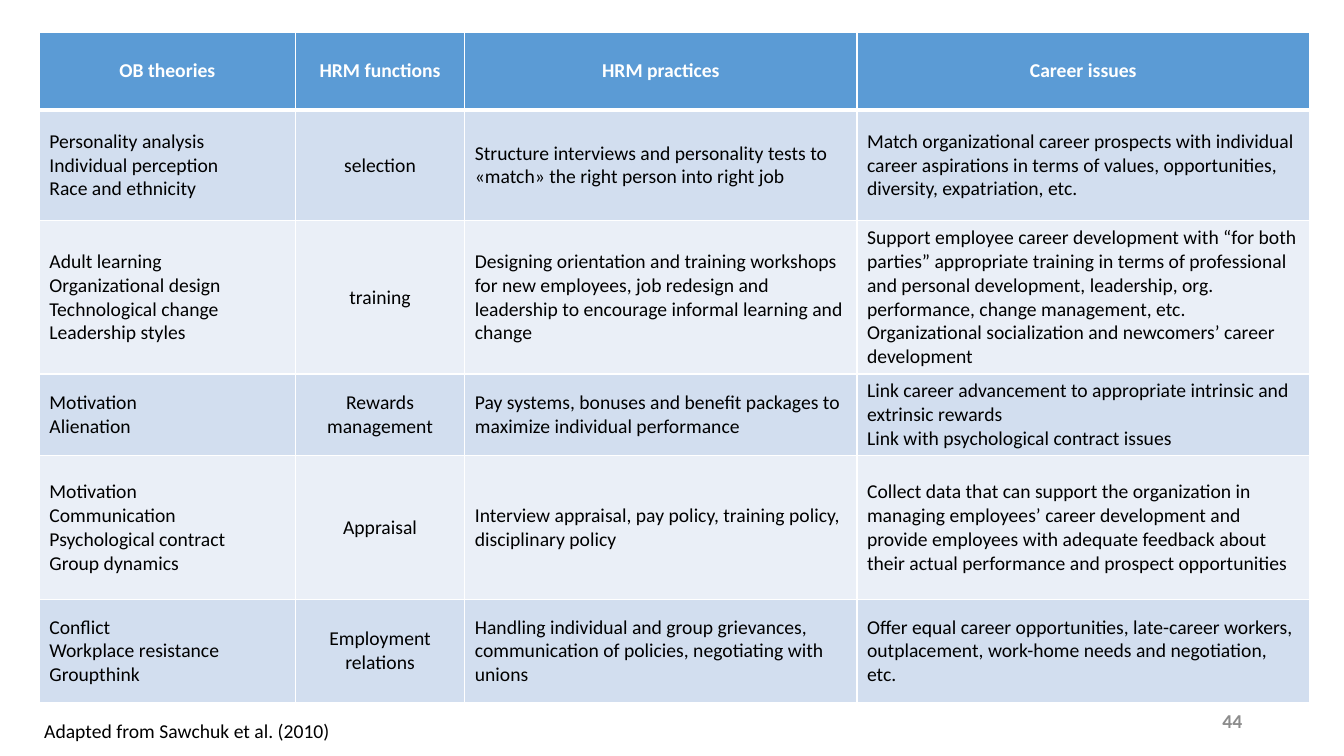
from lxml import etree
from pptx import Presentation
from pptx.dml.color import RGBColor
from pptx.enum.text import MSO_ANCHOR, PP_ALIGN
from pptx.oxml.ns import qn
from pptx.util import Inches, Pt

HEADINGS = ("OB theories", "HRM functions", "HRM practices", "Career issues")
TOPICS = [
    ("Personality analysis\nIndividual perception\nRace and ethnicity",
     "selection",
     "Structure interviews and personality tests to «match» the right person into right job",
     "Match organizational career prospects with individual career aspirations in terms of "
     "values, opportunities, diversity, expatriation, etc."),
    ("Adult learning\nOrganizational design\nTechnological change\nLeadership styles",
     "training",
     "Designing orientation and training workshops for new employees, job redesign and "
     "leadership to encourage informal learning and change",
     "Support employee career development with “for both parties” appropriate training in "
     "terms of professional and personal development, leadership, org. performance, change "
     "management, etc.\nOrganizational socialization and newcomers’ career development"),
    ("Motivation\nAlienation",
     "Rewards management",
     "Pay systems, bonuses and benefit packages to maximize individual performance",
     "Link career advancement to appropriate intrinsic and extrinsic rewards\n"
     "Link with psychological contract issues"),
    ("Motivation\nCommunication\nPsychological contract\nGroup dynamics",
     "Appraisal",
     "Interview appraisal, pay policy, training policy, disciplinary policy",
     "Collect data that can support the organization in managing employees’ career "
     "development and provide employees with adequate feedback about their actual "
     "performance and prospect opportunities"),
    ("Conflict\nWorkplace resistance\nGroupthink",
     "Employment relations",
     "Handling individual and group grievances, communication of policies, negotiating "
     "with unions",
     "Offer equal career opportunities, late-career workers, outplacement, work-home needs "
     "and negotiation, etc."),
]
CREDIT = "Adapted from Sawchuk et al. (2010)"
PAGE = "44"

COLUMN_WIDTHS = (2.54, 1.68, 3.89, 4.49)
ROW_HEIGHTS = (0.77, 1.1, 1.43, 0.77, 1.43, 1.02)
FUNCTION_COLUMN = 1

THEME = {
    "font": "Calibri",
    "size": 14,
    "header": "5B9BD5",
    "bands": ("D2DEEF", "EAEFF7"),
    "rule": "FFFFFF",
    "header_text": "FFFFFF",
    "text": "000000",
    "page": "8C8C8C",
}


def write(frame, words, color, align=PP_ALIGN.LEFT, bold=False):
    frame.text = words
    for paragraph in frame.paragraphs:
        paragraph.alignment = align
        for run in paragraph.runs:
            run.font.name = THEME["font"]
            run.font.size = Pt(THEME["size"])
            run.font.bold = bold
            run.font.color.rgb = RGBColor.from_string(color)


def add_borders(cell, top, bottom):
    """Rule all four sides; top and bottom weights are in points."""
    properties = cell._tc.get_or_add_tcPr()
    for side, weight in (("L", 1), ("R", 1), ("T", top), ("B", bottom)):
        line = etree.SubElement(properties, qn(f"a:ln{side}"), w=str(Pt(weight)))
        fill = etree.SubElement(line, qn("a:solidFill"))
        etree.SubElement(fill, qn("a:srgbClr"), val=THEME["rule"])


def add_topic_table(slide):
    rows = [HEADINGS, *TOPICS]
    table = slide.shapes.add_table(
        len(rows), len(HEADINGS), Inches(0.39), Inches(0.32),
        Inches(sum(COLUMN_WIDTHS)), Inches(sum(ROW_HEIGHTS))).table
    for column, width in zip(table.columns, COLUMN_WIDTHS):
        column.width = Inches(width)
    for row, height in zip(table.rows, ROW_HEIGHTS):
        row.height = Inches(height)

    for r, entries in enumerate(rows):
        heading = r == 0
        fill = THEME["header"] if heading else THEME["bands"][(r - 1) % 2]
        color = THEME["header_text"] if heading else THEME["text"]
        for c, words in enumerate(entries):
            cell = table.cell(r, c)
            centred = heading or c == FUNCTION_COLUMN
            write(cell.text_frame, words, color,
                  PP_ALIGN.CENTER if centred else PP_ALIGN.LEFT, heading)
            cell.vertical_anchor = MSO_ANCHOR.MIDDLE
            add_borders(cell, top=3 if r == 1 else 1, bottom=3 if heading else 1)
            cell.fill.solid()
            cell.fill.fore_color.rgb = RGBColor.from_string(fill)


def main():
    deck = Presentation()
    deck.slide_width, deck.slide_height = Inches(13.33), Inches(7.5)
    slide = deck.slides.add_slide(deck.slide_layouts[6])
    add_topic_table(slide)

    credit = slide.shapes.add_textbox(
        Inches(0.34), Inches(7.08), Inches(3.06), Inches(0.34)).text_frame
    credit.word_wrap = False
    write(credit, CREDIT, THEME["text"])

    page = slide.shapes.add_textbox(
        Inches(9.42), Inches(6.95), Inches(3), Inches(0.4)).text_frame
    page.word_wrap = True
    page.vertical_anchor = MSO_ANCHOR.MIDDLE
    write(page, PAGE, THEME["page"], PP_ALIGN.RIGHT, bold=True)

    deck.save("out.pptx")


if __name__ == "__main__":
    main()
